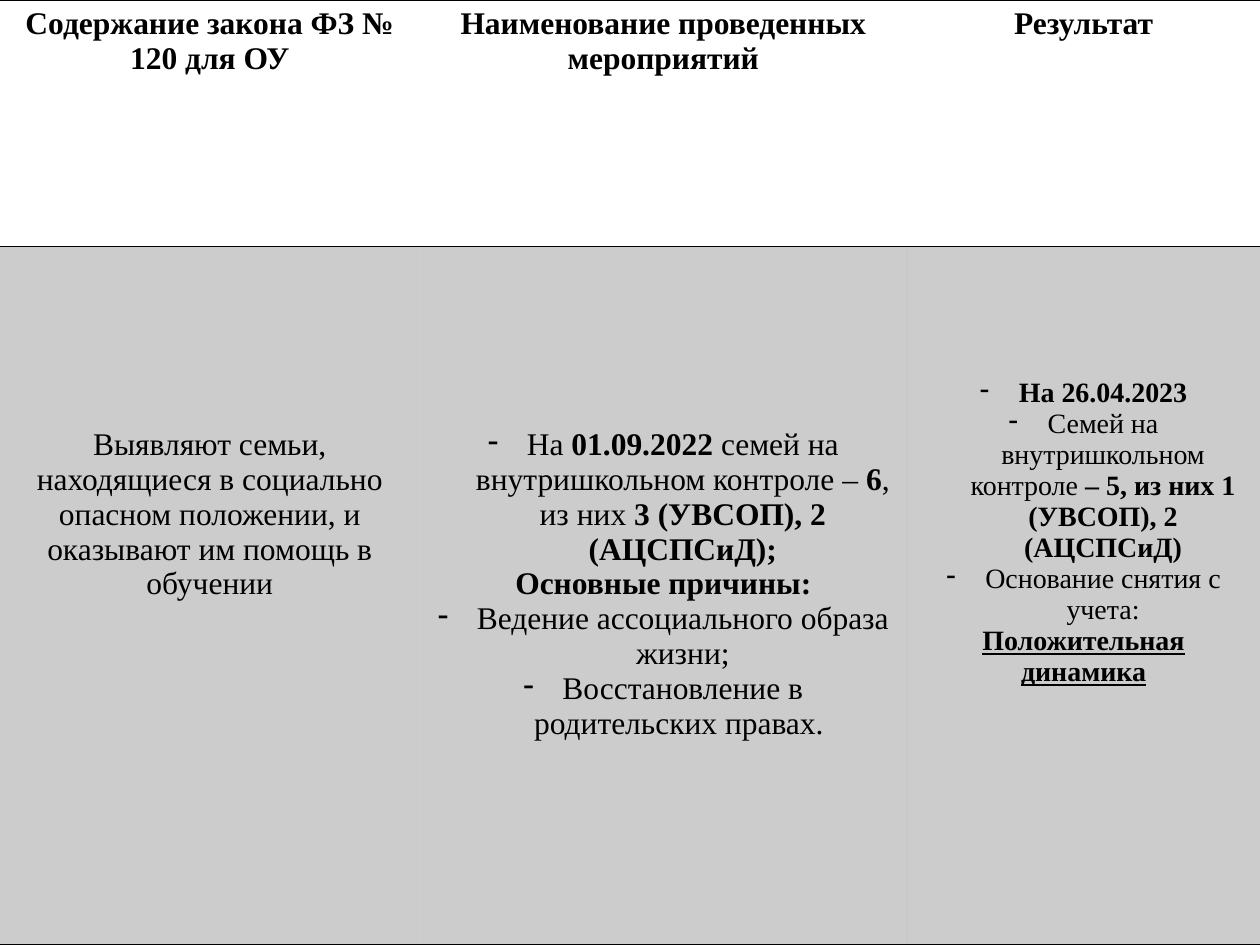
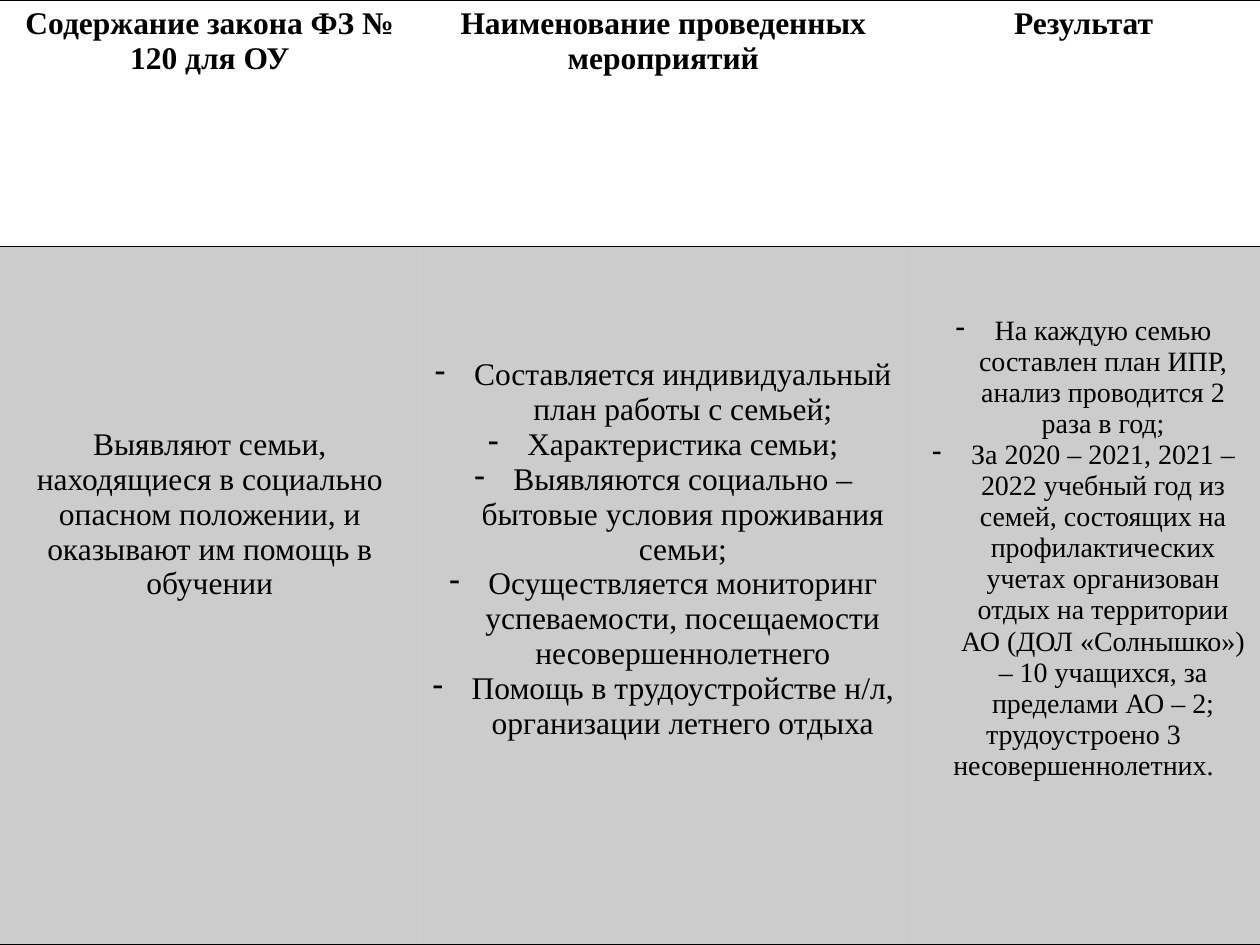
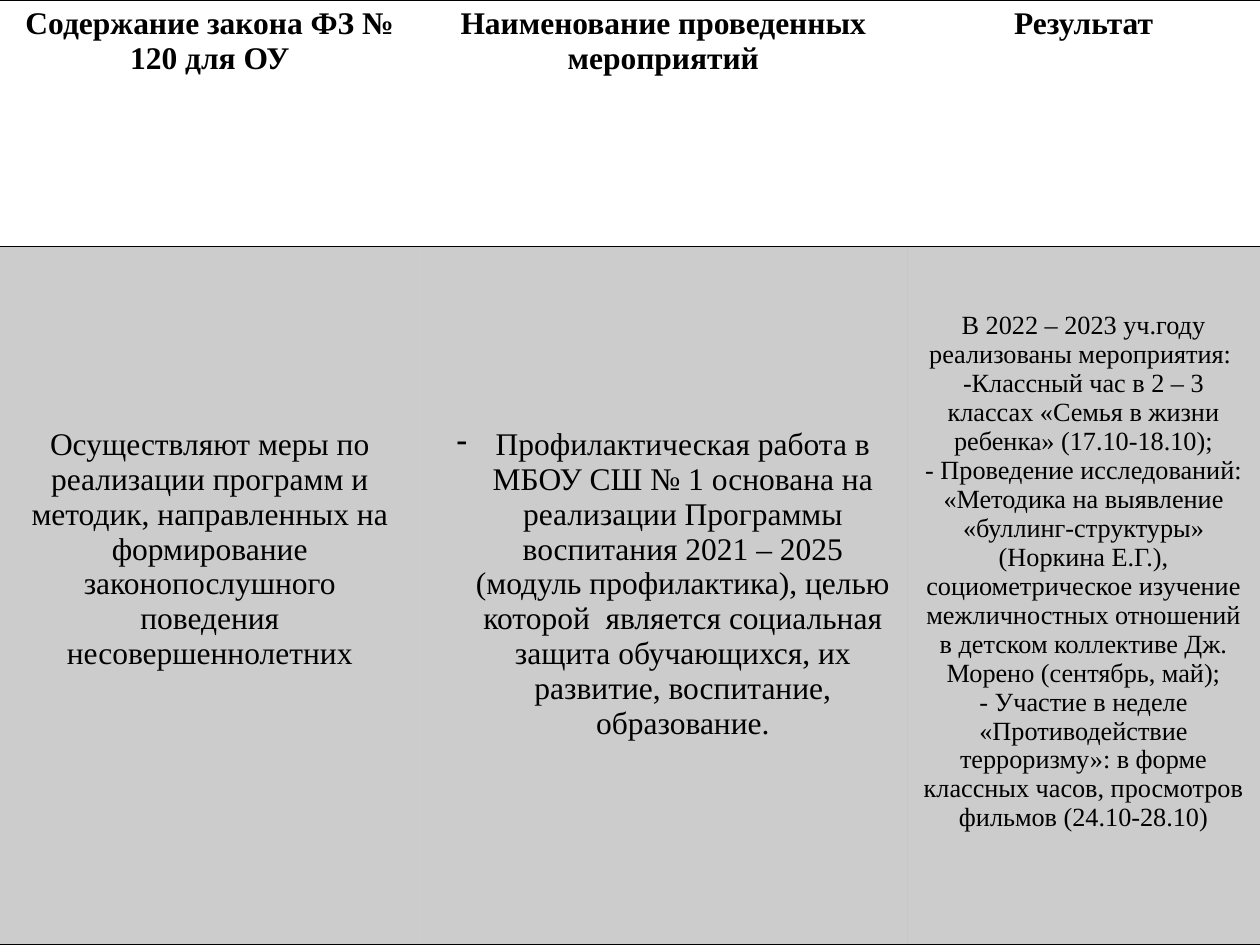
from dataclasses import dataclass

from lxml import etree
from pptx import Presentation
from pptx.dml.color import RGBColor
from pptx.enum.text import MSO_ANCHOR, PP_ALIGN
from pptx.oxml.ns import qn
from pptx.util import Pt

CENTER = PP_ALIGN.CENTER
TOP = MSO_ANCHOR.TOP

HEADINGS = (
    "Содержание закона ФЗ № 120 для ОУ",
    "Наименование проведенных мероприятий",
    "Результат",
)
FAMILY_DUTY = "Выявляют семьи, находящиеся в социально опасном положении, и оказывают им помощь в обучении"
PROGRAMME_DUTY = (
    "Осуществляют меры по реализации программ и методик, направленных на "
    "формирование законопослушного поведения несовершеннолетних"
)


@dataclass
class Line:
    text: str
    bullet: bool = False
    bold: bool = False
    underline: bool = False


@dataclass
class Entry:
    lines: list
    size: int = 18
    skipped_lines: int = 0


def color(value):
    return RGBColor.from_string(value)


def bullets(*texts):
    return [Line(text, bullet=True) for text in texts]


class Report:
    font_name = "Times New Roman"
    ink = "000000"
    fill_opacity = 20
    border_width = 1
    bullet_indent = 22.32
    cell_margin = 3.6
    line_spacing = 1.107
    column_widths = (239.76, 278.64, 201.6)
    row_heights = (141, 399)

    def __init__(self):
        self.deck = Presentation()
        self.deck.slide_width = Pt(720)
        self.deck.slide_height = Pt(540)
        self.page = None

    def add_page(self):
        self.page = self.deck.slides.add_slide(self.deck.slide_layouts[6])

    def add_table(self, entries):
        headings = [Entry([Line(heading, bold=True)]) for heading in HEADINGS]
        rows = (headings, entries)
        table = self.page.shapes.add_table(
            len(rows), len(HEADINGS), Pt(0), Pt(0),
            Pt(sum(self.column_widths)), Pt(sum(self.row_heights)),
        ).table
        table.first_row = False
        table.horz_banding = False
        for column, width in zip(table.columns, self.column_widths):
            column.width = Pt(width)
        for row, height in zip(table.rows, self.row_heights):
            row.height = Pt(height)
        for row_index, row_entries in enumerate(rows):
            for column_index, entry in enumerate(row_entries):
                cell = table.cell(row_index, column_index)
                self.style_cell(cell, shaded=row_index > 0)
                self.write_entry(cell, entry)

    def style_cell(self, cell, shaded):
        properties = cell._tc.get_or_add_tcPr()
        for side in ("lnL", "lnR"):
            border = etree.SubElement(properties, qn(f"a:{side}"))
            etree.SubElement(border, qn("a:noFill"))
        for side in ("lnT", "lnB"):
            border = etree.SubElement(properties, qn(f"a:{side}"), w=str(Pt(self.border_width)))
            solid = etree.SubElement(border, qn("a:solidFill"))
            etree.SubElement(solid, qn("a:srgbClr"), val=self.ink)
        if not shaded:
            cell.fill.background()
            return
        cell.fill.solid()
        cell.fill.fore_color.rgb = color(self.ink)
        shade = properties.find(qn("a:solidFill")).find(qn("a:srgbClr"))
        etree.SubElement(shade, qn("a:alpha"), val=str(self.fill_opacity * 1000))

    def write_entry(self, cell, entry):
        cell.vertical_anchor = TOP
        offset = entry.skipped_lines * entry.size * self.line_spacing
        cell.margin_top = Pt(self.cell_margin + offset)
        frame = cell.text_frame
        for index, line in enumerate(entry.lines):
            para = frame.add_paragraph() if index else frame.paragraphs[0]
            self.write_line(para, line, entry.size)

    def write_line(self, para, line, size):
        para.alignment = CENTER
        if line.bullet:
            self.add_bullet(para)
        font = para.font
        font.name = self.font_name
        font.size = Pt(size)
        font.color.rgb = color(self.ink)
        font.underline = line.underline
        parts = line.text.split("**")
        if len(parts) == 1:
            font.bold = line.bold
        for index, part in enumerate(parts):
            if part:
                span = para.add_run()
                span.text = part
                if len(parts) > 1:
                    span.font.bold = index % 2 == 1

    def add_bullet(self, para):
        properties = para._p.get_or_add_pPr()
        properties.set("marL", str(Pt(self.bullet_indent)))
        properties.set("indent", str(-Pt(self.bullet_indent)))
        etree.SubElement(properties, qn("a:buChar"), char="-")


PAGES = (
    (
        Entry([Line(FAMILY_DUTY)], skipped_lines=5),
        Entry(
            bullets("На **01.09.2022 **семей на внутришкольном контроле – **6**, из них **3 (УВСОП), 2 (АЦСПСиД);**")
            + [Line("Основные причины:", bold=True)]
            + bullets("Ведение ассоциального образа жизни;", "Восстановление в родительских правах. "),
            skipped_lines=5,
        ),
        Entry(
            [Line("На 26.04.2023", bullet=True, bold=True)]
            + bullets(
                "Семей на внутришкольном контроле **– 5, из них 1 (УВСОП), 2 (АЦСПСиД)**",
                "Основание снятия с учета:",
            )
            + [Line("Положительная динамика", bold=True, underline=True)],
            size=16,
            skipped_lines=4,
        ),
    ),
    (
        Entry([Line(FAMILY_DUTY)], skipped_lines=5),
        Entry(
            bullets(
                "Составляется индивидуальный план работы с семьей;",
                "Характеристика семьи;",
                "Выявляются социально – бытовые условия проживания семьи;",
                "Осуществляется мониторинг успеваемости, посещаемости несовершеннолетнего",
                "Помощь в трудоустройстве н/л, организации летнего отдыха",
            ),
            skipped_lines=3,
        ),
        Entry(
            bullets(
                "На каждую семью составлен план ИПР, анализ проводится 2 раза в год;",
                "За 2020 – 2021, 2021 – 2022 учебный год из семей, состоящих на "
                "профилактических учетах организован отдых на территории АО "
                "(ДОЛ «Солнышко») – 10 учащихся, за пределами АО – 2;",
            )
            + [Line("трудоустроено 3 несовершеннолетних.")],
            size=16,
            skipped_lines=2,
        ),
    ),
    (
        Entry([Line(PROGRAMME_DUTY)], skipped_lines=5),
        Entry(
            bullets(
                "Профилактическая работа в МБОУ СШ № 1 основана на реализации "
                "Программы воспитания 2021 – 2025 (модуль профилактика), целью "
                "которой  является социальная защита обучающихся, их развитие, "
                "воспитание, образование."
            ),
            skipped_lines=5,
        ),
        Entry(
            [
                Line("В 2022 – 2023 уч.году реализованы мероприятия: "),
                Line("-Классный час в 2 – 3 классах «Семья в жизни ребенка» (17.10-18.10);"),
                Line("- Проведение исследований: «Методика на выявление «буллинг-структуры»"),
                Line(
                    "(Норкина Е.Г.), социометрическое изучение межличностных отношений "
                    "в детском коллективе Дж. Морено (сентябрь, май);"
                ),
                Line(
                    "- Участие в неделе «Противодействие терроризму»: в форме классных "
                    "часов, просмотров фильмов (24.10-28.10)"
                ),
            ],
            size=15,
            skipped_lines=2,
        ),
    ),
)


def main():
    report = Report()
    for entries in PAGES:
        report.add_page()
        report.add_table(entries)
    report.deck.save("out.pptx")


if __name__ == "__main__":
    main()
